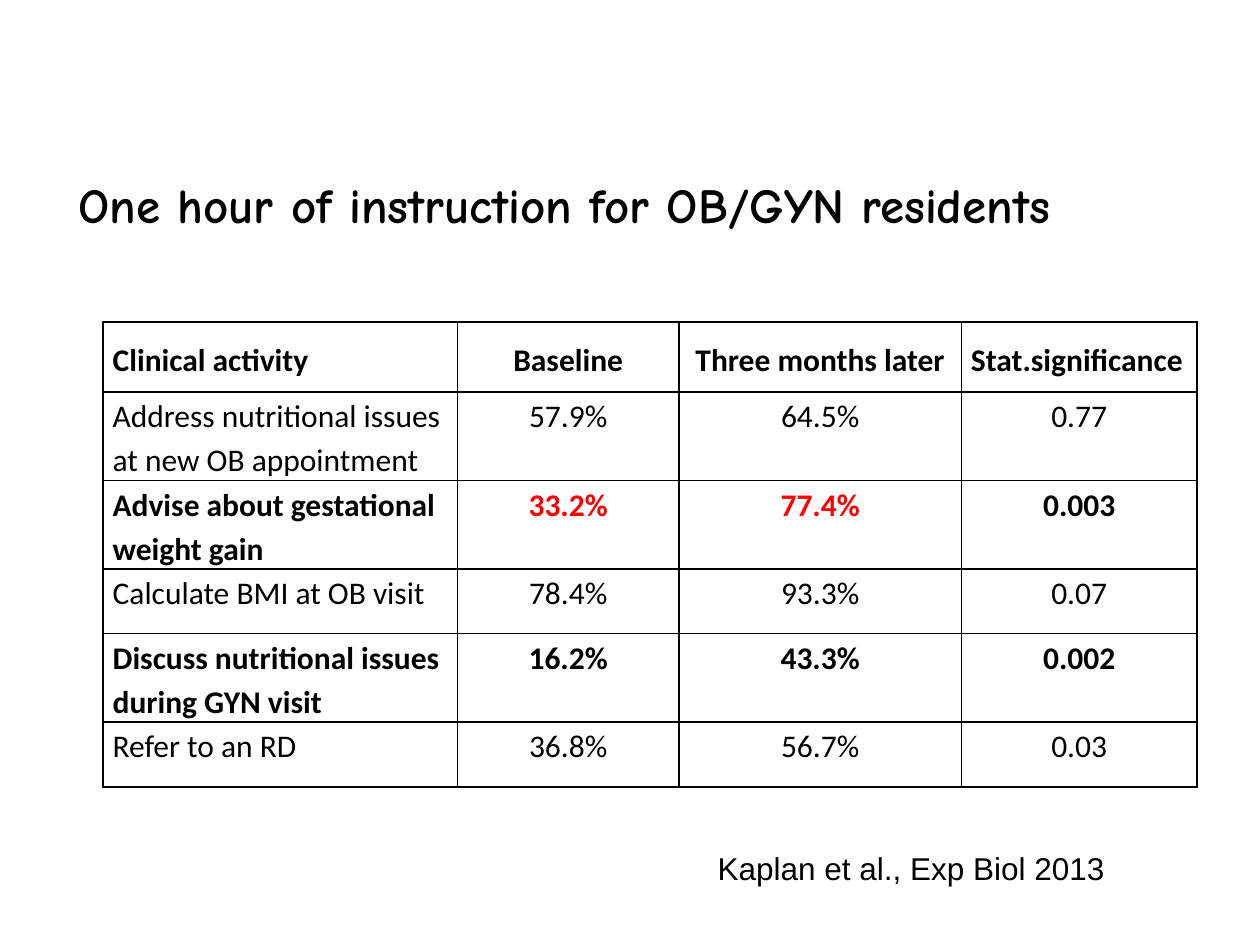
from dataclasses import dataclass

from lxml import etree
from pptx import Presentation
from pptx.dml.color import RGBColor
from pptx.enum.text import MSO_ANCHOR, MSO_AUTO_SIZE, PP_ALIGN
from pptx.oxml.ns import qn
from pptx.util import Pt

LEFT, CENTER = PP_ALIGN.LEFT, PP_ALIGN.CENTER
TOP = MSO_ANCHOR.TOP
NO_AUTOFIT = MSO_AUTO_SIZE.NONE
TITLE_ONLY = 5


@dataclass(frozen=True)
class Theme:
    ink: str = "000000"
    alert: str = "FF0000"
    title_font: str = "Comic Neue"
    table_font: str = "Calibri"
    source_font: str = "Arial"
    title_size: float = 28
    body_size: float = 18
    border: float = 1
    cell_inset: float = 5.4


@dataclass(frozen=True)
class Activity:
    name: str
    baseline: str
    later: str
    significance: str
    height: float
    bold: bool = False
    rate_color: str = Theme.ink


THEME = Theme()
HEADINGS = Activity("Clinical activity", "Baseline", "Three months later",
                    "Stat.significance", 40, bold=True)
ACTIVITIES = [
    Activity("Address nutritional issues at new OB appointment",
             "57.9%", "64.5%", "0.77", 50.4),
    Activity("Advise about gestational weight gain",
             "33.2%", "77.4%", "0.003", 50.4, bold=True, rate_color=THEME.alert),
    Activity("Calculate BMI at OB visit", "78.4%", "93.3%", "0.07", 37),
    Activity("Discuss nutritional issues during GYN visit",
             "16.2%", "43.3%", "0.002", 50.4, bold=True),
    Activity("Refer to an RD", "36.8%", "56.7%", "0.03", 37),
]
COLUMN_WIDTHS = [202.5, 126.5, 161.5, 134.5]


def write(frame, text: str, *, font: str, size: float, color: str = THEME.ink,
          bold: bool = False, align=LEFT, spacing: float = 1, after: float = 0) -> None:
    para = frame.paragraphs[0]
    para.alignment = align
    para.line_spacing = spacing
    para.space_before = Pt(0)
    para.space_after = Pt(after)
    span = para.add_run()
    span.text = text
    span.font.name = font
    span.font.size = Pt(size)
    span.font.bold = bold
    span.font.color.rgb = RGBColor.from_string(color)


def add_borders(cell) -> None:
    properties = cell._tc.get_or_add_tcPr()
    for side in ("a:lnL", "a:lnR", "a:lnT", "a:lnB"):
        line = etree.SubElement(properties, qn(side), w=str(Pt(THEME.border)))
        fill = etree.SubElement(line, qn("a:solidFill"))
        etree.SubElement(fill, qn("a:srgbClr"), val=THEME.ink)


def fill_row(table, index: int, activity: Activity) -> None:
    is_header = index == 0
    table.rows[index].height = Pt(activity.height)
    entries = [
        (activity.name, THEME.ink, LEFT),
        (activity.baseline, activity.rate_color, CENTER),
        (activity.later, activity.rate_color, CENTER),
        (activity.significance, THEME.ink, LEFT if is_header else CENTER),
    ]
    for column, (text, color, align) in enumerate(entries):
        cell = table.cell(index, column)
        cell.margin_left = cell.margin_right = Pt(THEME.cell_inset)
        cell.margin_top = cell.margin_bottom = Pt(0)
        cell.vertical_anchor = TOP
        add_borders(cell)
        cell.fill.background()
        write(cell.text_frame, text, font=THEME.table_font, size=THEME.body_size,
              color=color, bold=activity.bold, align=align,
              spacing=1.5 if is_header else 1.15, after=18 if is_header else 0)


def add_activity_table(page) -> None:
    rows = [HEADINGS, *ACTIVITIES]
    table = page.shapes.add_table(
        len(rows), len(COLUMN_WIDTHS), Pt(59), Pt(184),
        Pt(sum(COLUMN_WIDTHS)), Pt(sum(row.height for row in rows))).table
    table.first_row = table.horz_banding = False
    for column, width in zip(table.columns, COLUMN_WIDTHS):
        column.width = Pt(width)
    for index, row in enumerate(rows):
        fill_row(table, index, row)


def add_title(page) -> None:
    title = page.shapes.title
    title.left, title.top, title.width, title.height = Pt(37.5), Pt(96), Pt(682.5), Pt(41)
    frame = title.text_frame
    frame.auto_size = NO_AUTOFIT
    frame.vertical_anchor = TOP
    write(frame, "One hour of instruction for OB/GYN residents",
          font=THEME.title_font, size=THEME.title_size, bold=True)


def add_source(page) -> None:
    box = page.shapes.add_textbox(Pt(403), Pt(481.5), Pt(237.5), Pt(29))
    box.text_frame.word_wrap = False
    write(box.text_frame, "Kaplan et al., Exp Biol 2013",
          font=THEME.source_font, size=THEME.body_size)


def main() -> None:
    deck = Presentation()
    deck.slide_width, deck.slide_height = Pt(720), Pt(540)
    page = deck.slides.add_slide(deck.slide_layouts[TITLE_ONLY])
    add_activity_table(page)
    add_source(page)
    add_title(page)
    deck.save("out.pptx")


if __name__ == "__main__":
    main()
